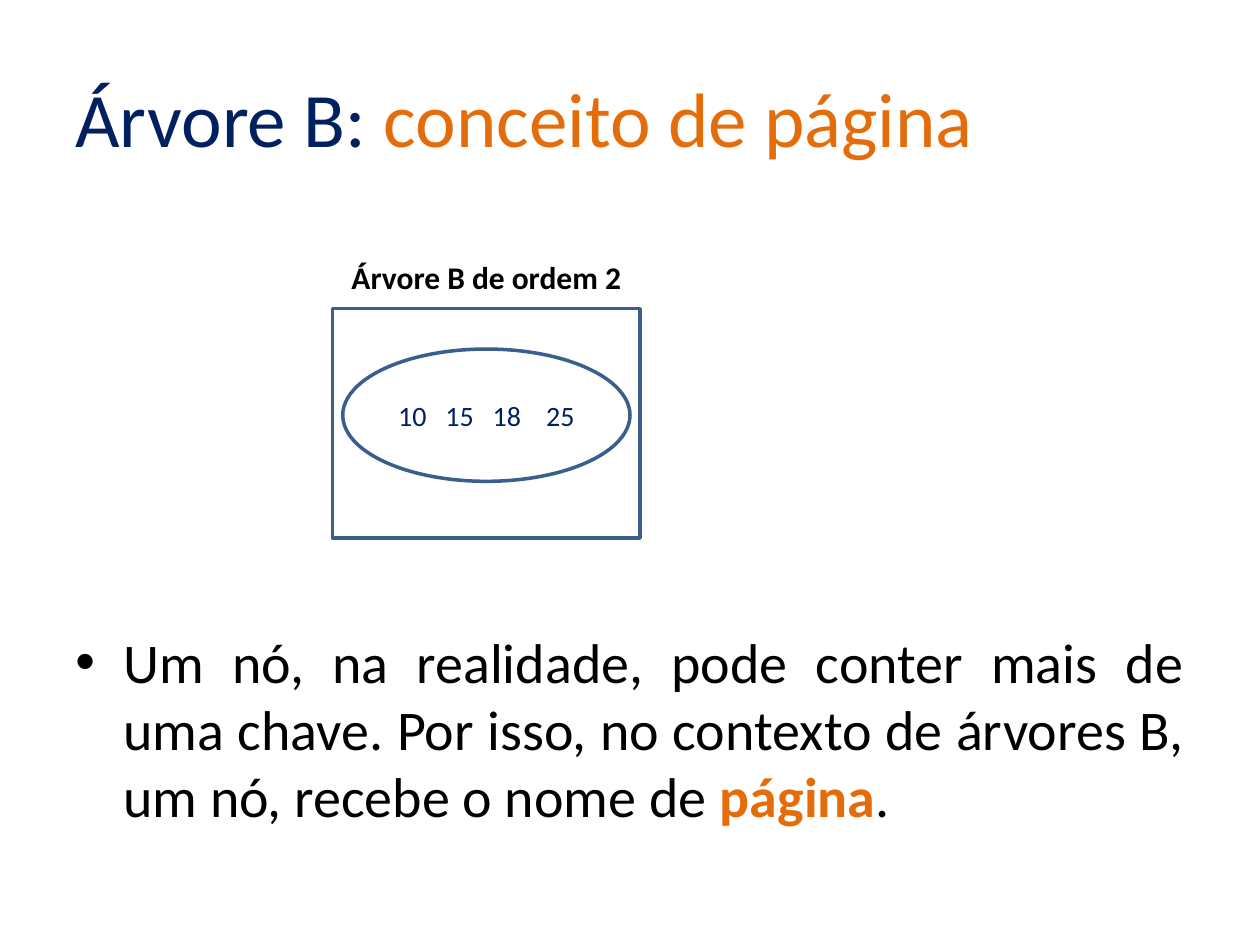
from lxml import etree
from pptx import Presentation
from pptx import util as u
from pptx.dml.color import RGBColor
from pptx.enum import shapes, text
from pptx.oxml.ns import qn

THEME = {
    "font": "Calibri",
    "navy": "002060", "orange": "E46C0A", "black": "000000", "outline": "3A5F8C",
    "title": 44, "label": 18, "key": 16, "body": 32,
    "line": 2,
}

# Each span: wording, colour name, bold
TITLE = [("Árvore B: ", "navy", False), ("conceito de página", "orange", False)]
LABEL = [("Árvore B de ordem 2", "black", True)]
KEYS = ["10", "15", "18", "25"]
KEY_GAPS = [7.2, 7.2, 10.8]  # extra points after each key but the last
BODY = [
    ("Um nó, na realidade, pode conter mais de uma chave. Por isso, no contexto "
     "de árvores B, um nó, recebe o nome de ", "black", False),
    ("página", "orange", True),
    (".", "black", False),
]

WIDTH, HEIGHT = 10, 7.5
MARGIN = WIDTH * 0.05
CONTENT = WIDTH - 2 * MARGIN
PAGE_CENTRE = 3.86


def centred(top, width, height):
    """Area centred on the axis of the page diagram."""
    return PAGE_CENTRE - width / 2, top, width, height


def inches(area):
    return [u.Inches(value) for value in area]


def write(box, spans, size, align, anchor=text.MSO_ANCHOR.TOP):
    frame = box.text_frame
    frame.word_wrap = True
    frame.vertical_anchor = anchor
    para = frame.paragraphs[0]
    para.alignment = align
    for wording, colour, bold in spans:
        span = para.add_run()
        span.text = wording
        span.font.name = THEME["font"]
        span.font.size = u.Pt(THEME[size])
        span.font.bold = bold
        span.font.color.rgb = RGBColor.from_string(THEME[colour])
    return para


def add_text(slide, area, *content):
    return write(slide.shapes.add_textbox(*inches(area)), *content)


def add_outline(slide, kind, area):
    shape = slide.shapes.add_shape(kind, *inches(area))
    shape.shadow.inherit = False
    shape.fill.background()
    shape.line.color.rgb = RGBColor.from_string(THEME["outline"])
    shape.line.width = u.Pt(THEME["line"])
    return shape


def add_bullet(para, indent):
    para.space_before = u.Pt(THEME["body"] * 0.2)
    props = para._p.get_or_add_pPr()
    props.set("marL", str(u.Inches(indent)))
    props.set("indent", str(-u.Inches(indent)))
    etree.SubElement(props, qn("a:buFont")).set("typeface", "Arial")
    etree.SubElement(props, qn("a:buChar")).set("char", "•")


def write_keys(node):
    """Write the keys, widening the single space between neighbours."""
    spans = [(part, "navy", False) for key in KEYS for part in (key, " ")][:-1]
    para = write(node, spans, "key", text.PP_ALIGN.CENTER, text.MSO_ANCHOR.MIDDLE)
    for space, gap in zip(para.runs[1::2], KEY_GAPS):
        space.font._element.set("spc", str(round(gap * 100)))


def main():
    deck = Presentation()
    deck.slide_width, deck.slide_height = u.Inches(WIDTH), u.Inches(HEIGHT)
    slide = deck.slides.add_slide(deck.slide_layouts[6])

    add_text(slide, (MARGIN, 0.3, CONTENT, 1.25), TITLE, "title",
             text.PP_ALIGN.LEFT, text.MSO_ANCHOR.MIDDLE)
    add_outline(slide, shapes.MSO_SHAPE.RECTANGLE, centred(2.45, 2.44, 1.82))
    add_text(slide, centred(2, 2.42, 0.4), LABEL, "label", text.PP_ALIGN.CENTER)
    write_keys(add_outline(slide, shapes.MSO_SHAPE.OVAL, centred(2.77, 2.28, 1.05)))
    body = add_text(slide, (MARGIN, 4.93, CONTENT, 1.81), BODY, "body",
                    text.PP_ALIGN.JUSTIFY)
    add_bullet(body, 0.38)

    deck.save("out.pptx")


if __name__ == "__main__":
    main()
